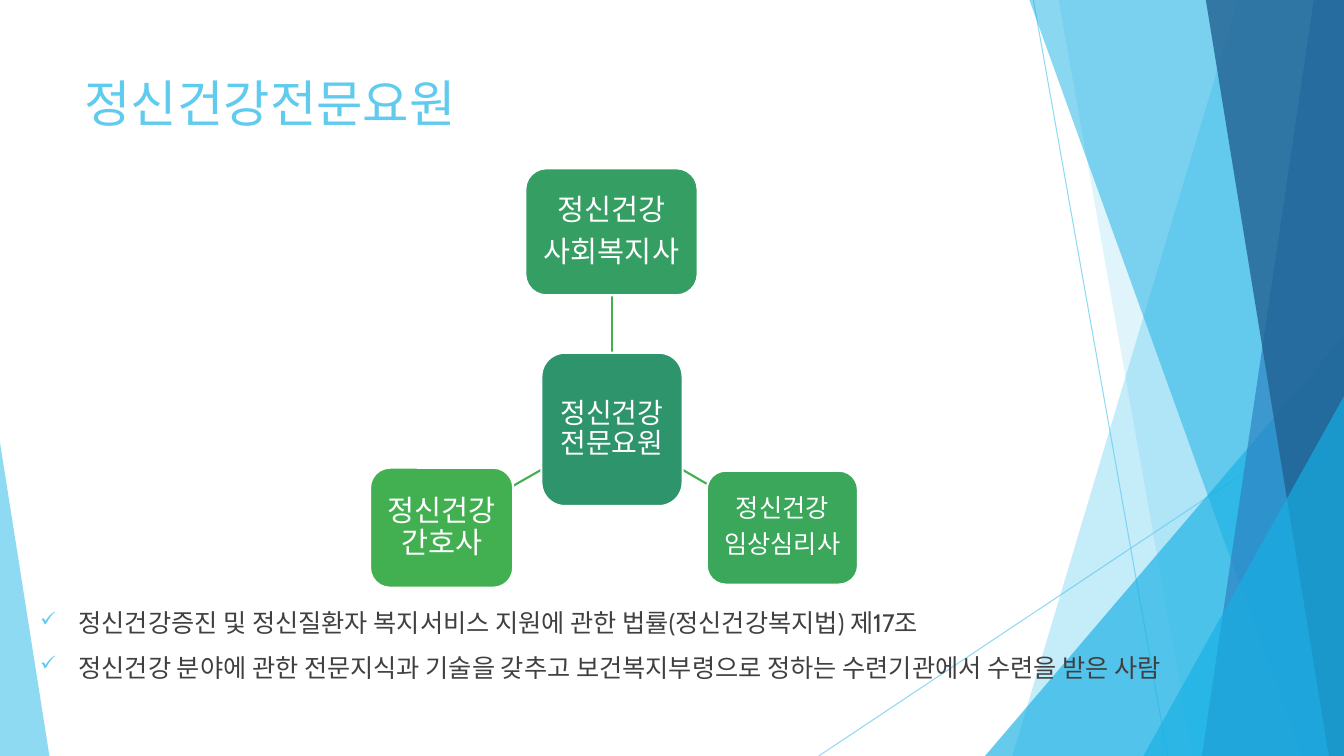
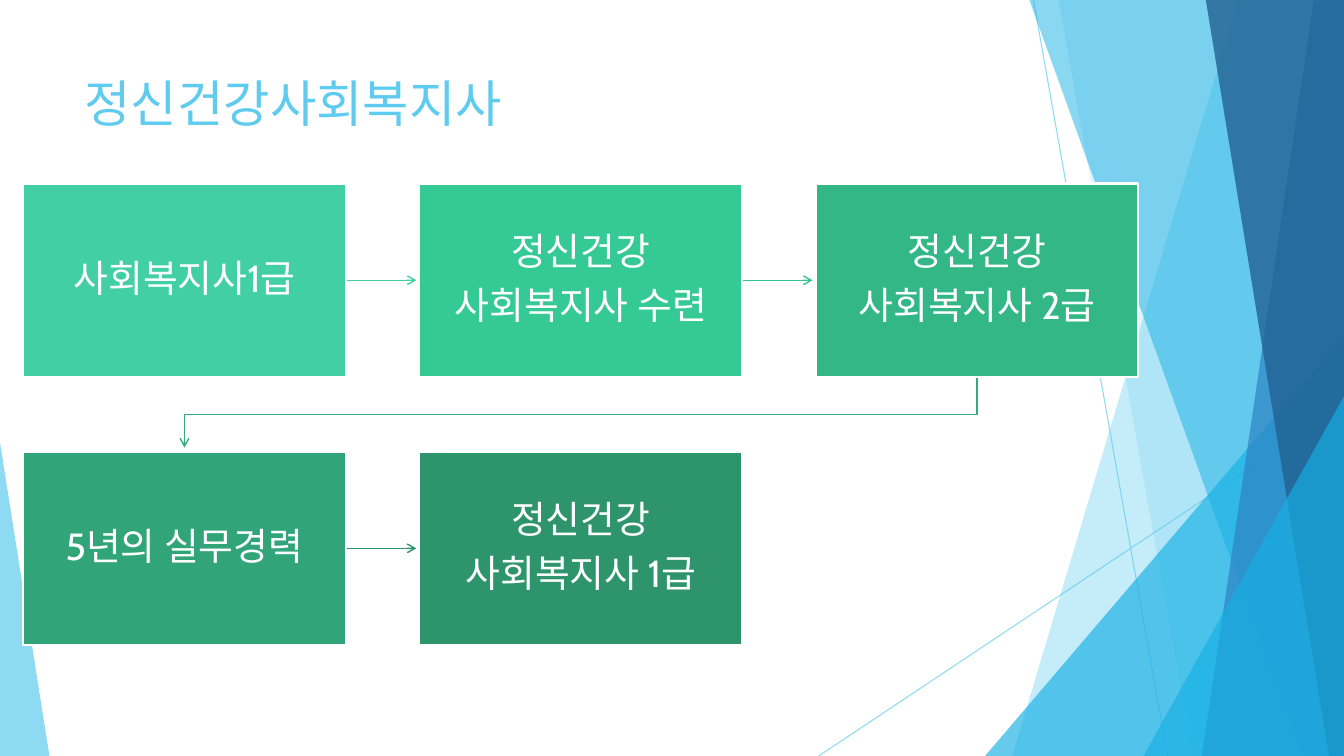
from dataclasses import dataclass

import lxml.etree
import pptx
import pptx.dml.color
import pptx.enum.shapes
import pptx.enum.text
import pptx.oxml.ns
import pptx.shapes.base
import pptx.slide
import pptx.text.text
import pptx.util

Inches = pptx.util.Inches
Pt = pptx.util.Pt
RGBColor = pptx.dml.color.RGBColor
Shapes = pptx.enum.shapes.MSO_SHAPE
Align = pptx.enum.text.PP_ALIGN
Anchor = pptx.enum.text.MSO_ANCHOR
qn = pptx.oxml.ns.qn

FONT = "Cabin"
WHITE = RGBColor(0xFF, 0xFF, 0xFF)
BODY_GRAY = RGBColor(0x40, 0x40, 0x40)
SKY = RGBColor(0x5F, 0xCB, 0xEF)
AZURE = RGBColor(0x17, 0xB0, 0xE4)
BLUE = RGBColor(0x2E, 0x83, 0xC3)
NAVY = RGBColor(0x22, 0x62, 0x92)
HUB_GREEN = RGBColor(0x2E, 0x94, 0x6B)
WORKER_GREEN = RGBColor(0x34, 0x9E, 0x63)
PSYCHOLOGIST_GREEN = RGBColor(0x3B, 0xA7, 0x5A)
NURSE_GREEN = RGBColor(0x42, 0xB0, 0x51)
STEP_MINT = RGBColor(0x42, 0xD0, 0xA2)
STEP_EMERALD = RGBColor(0x35, 0xC9, 0x96)
STEP_JADE = RGBColor(0x33, 0xB7, 0x87)
STEP_PINE = RGBColor(0x31, 0xA5, 0x79)
ARROW_EMERALD = RGBColor(0x34, 0xC3, 0x91)
ARROW_JADE = RGBColor(0x32, 0xAB, 0x7D)

PAGE_WIDTH, PAGE_HEIGHT = 13.33, 7.5
Point = tuple[float, float]


@dataclass(frozen=True)
class Band:
    """Slanted band that runs from its edge to the right side of the page."""
    top_x: float
    bottom_x: float
    color: RGBColor
    opacity: int


@dataclass(frozen=True)
class Wedge:
    """Corner triangle standing on the bottom of the page."""
    left: float
    width: float
    height: float
    apex: int
    color: RGBColor
    opacity: int


@dataclass(frozen=True)
class Card:
    left: float
    top: float
    width: float
    height: float
    color: RGBColor
    size: int
    lines: tuple[str, ...]


@dataclass(frozen=True)
class Step:
    column: int
    row: int
    color: RGBColor
    lines: tuple[str, ...]


BACKDROP: list[Band | Wedge] = [
    Band(12.28, 10.04, SKY, 36),
    Band(10.5, 11.83, SKY, 20),
    Wedge(9.77, 3.56, 4.17, 1, AZURE, 66),
    Band(10.21, 12.91, AZURE, 50),
    Band(13.03, 11.92, BLUE, 70),
    Band(11.96, 13.18, NAVY, 80),
    Wedge(11.34, 1.99, 3.57, 1, AZURE, 66),
    Wedge(0, 0.49, 3.11, 0, SKY, 70),
]
HAIRLINES: list[tuple[Point, Point]] = [
    ((10.25, 0), (11.58, PAGE_HEIGHT)),
    ((PAGE_WIDTH, 4.03), (8.12, PAGE_HEIGHT)),
]

SPECIALISTS = [
    Card(5.37, 3.5, 1.4, 1.52, HUB_GREEN, 20, ("정신건강전문요원",)),
    Card(5.21, 1.67, 1.71, 1.26, WORKER_GREEN, 21, ("정신건강", "사회복지사")),
    Card(7.01, 4.67, 1.5, 1.13, PSYCHOLOGIST_GREEN, 18, ("정신건강", "임상심리사")),
    Card(3.67, 4.64, 1.42, 1.19, NURSE_GREEN, 21, ("정신건강간호사",)),
]
SPOKES: list[tuple[Point, Point]] = [
    ((6.07, 3.5), (6.07, 2.93)),
    ((6.77, 4.66), (7.01, 4.8)),
    ((5.37, 4.66), (5.09, 4.82)),
]
LEGAL_NOTES = (
    "정신건강증진 및 정신질환자 복지서비스 지원에 관한 법률(정신건강복지법) 제17조",
    "정신건강 분야에 관한 전문지식과 기술을 갖추고 보건복지부령으로 정하는 수련기관에서 수련을 받은 사람",
)

STEP_LEFT, STEP_TOP = 0.23, 1.82
STEP_WIDTH, STEP_HEIGHT = 3.2, 1.92
COLUMN_PITCH, ROW_PITCH = 3.93, 2.66
ARROW_LENGTH = 0.7
STEPS = [
    Step(0, 0, STEP_MINT, ("사회복지사1급",)),
    Step(1, 0, STEP_EMERALD, ("정신건강", "사회복지사 수련")),
    Step(2, 0, STEP_JADE, ("정신건강", "사회복지사 2급")),
    Step(0, 1, STEP_PINE, ("5년의 실무경력",)),
    Step(1, 1, HUB_GREEN, ("정신건강", "사회복지사 1급")),
]
ARROW_COLORS = [STEP_MINT, ARROW_EMERALD, ARROW_JADE, HUB_GREEN]


# Drawing helpers
def set_opacity(shape: pptx.shapes.base.BaseShape, percent: int) -> None:
    color = shape.element.spPr.find(".//" + qn("a:srgbClr"))
    lxml.etree.SubElement(color, qn("a:alpha"), val=str(percent * 1000))


def add_arrowhead(line_shape: pptx.shapes.base.BaseShape) -> None:
    outline = line_shape.element.spPr.find(qn("a:ln"))
    lxml.etree.SubElement(outline, qn("a:tailEnd"), type="arrow")


def style_font(para: pptx.text.text._Paragraph, size: int, color: RGBColor) -> None:
    para.font.name = FONT
    para.font.size = Pt(size)
    para.font.color.rgb = color


def add_line(page: pptx.slide.Slide, start: Point, end: Point,
             color: RGBColor, weight: float) -> pptx.shapes.base.BaseShape:
    line = page.shapes.add_connector(
        pptx.enum.shapes.MSO_CONNECTOR.STRAIGHT,
        *(Inches(value) for value in (*start, *end)))
    line.line.color.rgb = color
    line.line.width = Pt(weight)
    lxml.etree.SubElement(line.element.spPr, qn("a:effectLst"))
    return line


def add_outline(page: pptx.slide.Slide, points: list[Point],
                closed: bool) -> pptx.shapes.base.BaseShape:
    start, *rest = [(Inches(x), Inches(y)) for x, y in points]
    builder = page.shapes.build_freeform(*start)
    builder.add_line_segments(rest, close=closed)
    outline = builder.convert_to_shape()
    outline.shadow.inherit = False
    return outline


def add_text_box(page: pptx.slide.Slide, left: float, top: float, width: float,
                 height: float) -> pptx.text.text.TextFrame:
    box = page.shapes.add_textbox(Inches(left), Inches(top), Inches(width), Inches(height))
    box.text_frame.word_wrap = True
    return box.text_frame


def add_card(page: pptx.slide.Slide, card: Card, preset: Shapes, inset: float) -> None:
    shape = page.shapes.add_shape(preset, Inches(card.left), Inches(card.top),
                                  Inches(card.width), Inches(card.height))
    shape.shadow.inherit = False
    shape.fill.solid()
    shape.fill.fore_color.rgb = card.color
    shape.line.color.rgb = WHITE
    shape.line.width = Pt(1.5)
    frame = shape.text_frame
    frame.word_wrap = True
    frame.vertical_anchor = Anchor.MIDDLE
    frame.margin_left = frame.margin_right = Inches(inset)
    frame.margin_top = frame.margin_bottom = Inches(inset)
    frame.text = "\n".join(card.lines)
    for para in frame.paragraphs:
        para.alignment = Align.CENTER
        para.line_spacing = 0.9
        para.space_after = Pt(round(card.size * 0.35, 1))
        style_font(para, card.size, WHITE)


# Shared backdrop and title
def add_backdrop(page: pptx.slide.Slide) -> None:
    for start, end in HAIRLINES:
        set_opacity(add_line(page, start, end, SKY, 0.75), 70)
    for part in BACKDROP:
        if isinstance(part, Band):
            shape = add_outline(page, [(part.top_x, 0), (PAGE_WIDTH, 0),
                                       (PAGE_WIDTH, PAGE_HEIGHT),
                                       (part.bottom_x, PAGE_HEIGHT)], closed=True)
        else:
            shape = page.shapes.add_shape(
                Shapes.ISOSCELES_TRIANGLE, Inches(part.left),
                Inches(PAGE_HEIGHT - part.height), Inches(part.width), Inches(part.height))
            shape.adjustments[0] = part.apex
            shape.shadow.inherit = False
        shape.fill.solid()
        shape.fill.fore_color.rgb = part.color
        set_opacity(shape, part.opacity)
        shape.line.fill.background()


def add_page(deck: pptx.presentation.Presentation, title: str) -> pptx.slide.Slide:
    page = deck.slides.add_slide(deck.slide_layouts[6])
    add_backdrop(page)
    frame = add_text_box(page, 0.74, 0.67, 9.4, 1.44)
    frame.text = title
    style_font(frame.paragraphs[0], 36, SKY)
    return page


# Checked notes
def add_check_bullet(para: pptx.text.text._Paragraph) -> None:
    properties = para._p.get_or_add_pPr()
    properties.set("marL", str(Inches(0.38)))
    properties.set("indent", str(Inches(-0.38)))
    bullet_color = lxml.etree.SubElement(properties, qn("a:buClr"))
    lxml.etree.SubElement(bullet_color, qn("a:srgbClr"), val=str(SKY))
    lxml.etree.SubElement(properties, qn("a:buSzPct"), val="80000")
    lxml.etree.SubElement(properties, qn("a:buChar"), char="✓")


def add_legal_notes(page: pptx.slide.Slide) -> None:
    frame = add_text_box(page, 0.3, 5.98, 12.5, 1.21)
    frame.text = "\n".join(LEGAL_NOTES)
    for para in frame.paragraphs:
        para.space_before = Pt(10)
        add_check_bullet(para)
        style_font(para, 18, BODY_GRAY)


# Qualification path
def step_corner(step: Step) -> Point:
    return (STEP_LEFT + step.column * COLUMN_PITCH, STEP_TOP + step.row * ROW_PITCH)


def add_step_arrow(page: pptx.slide.Slide, source: Step, target: Step,
                   color: RGBColor) -> None:
    left, top = step_corner(source)
    if source.row == target.row:
        start = (left + STEP_WIDTH, top + STEP_HEIGHT / 2)
        arrow = add_line(page, start, (start[0] + ARROW_LENGTH, start[1]), color, 1)
    else:
        source_x = left + STEP_WIDTH / 2
        target_x = step_corner(target)[0] + STEP_WIDTH / 2
        bottom = top + STEP_HEIGHT
        turn = bottom + 0.37
        arrow = add_outline(page, [(source_x, bottom), (source_x, turn), (target_x, turn),
                                   (target_x, bottom + ARROW_LENGTH)], closed=False)
        arrow.fill.background()
        arrow.line.color.rgb = color
        arrow.line.width = Pt(1)
    add_arrowhead(arrow)


def main() -> None:
    deck = pptx.Presentation()
    deck.slide_width, deck.slide_height = Inches(PAGE_WIDTH), Inches(PAGE_HEIGHT)

    # Specialists around the hub
    page = add_page(deck, "정신건강전문요원")
    add_legal_notes(page)
    for start, end in SPOKES:
        add_line(page, start, end, NURSE_GREEN, 1.5)
    for card in SPECIALISTS:
        add_card(page, card, Shapes.ROUNDED_RECTANGLE, 0.06)

    # Steps to the first grade
    page = add_page(deck, "정신건강사회복지사")
    for source, target, color in zip(STEPS, STEPS[1:], ARROW_COLORS):
        add_step_arrow(page, source, target, color)
    for step in STEPS:
        card = Card(*step_corner(step), STEP_WIDTH, STEP_HEIGHT, step.color, 27, step.lines)
        add_card(page, card, Shapes.RECTANGLE, 0.21)

    deck.save("out.pptx")


if __name__ == "__main__":
    main()
